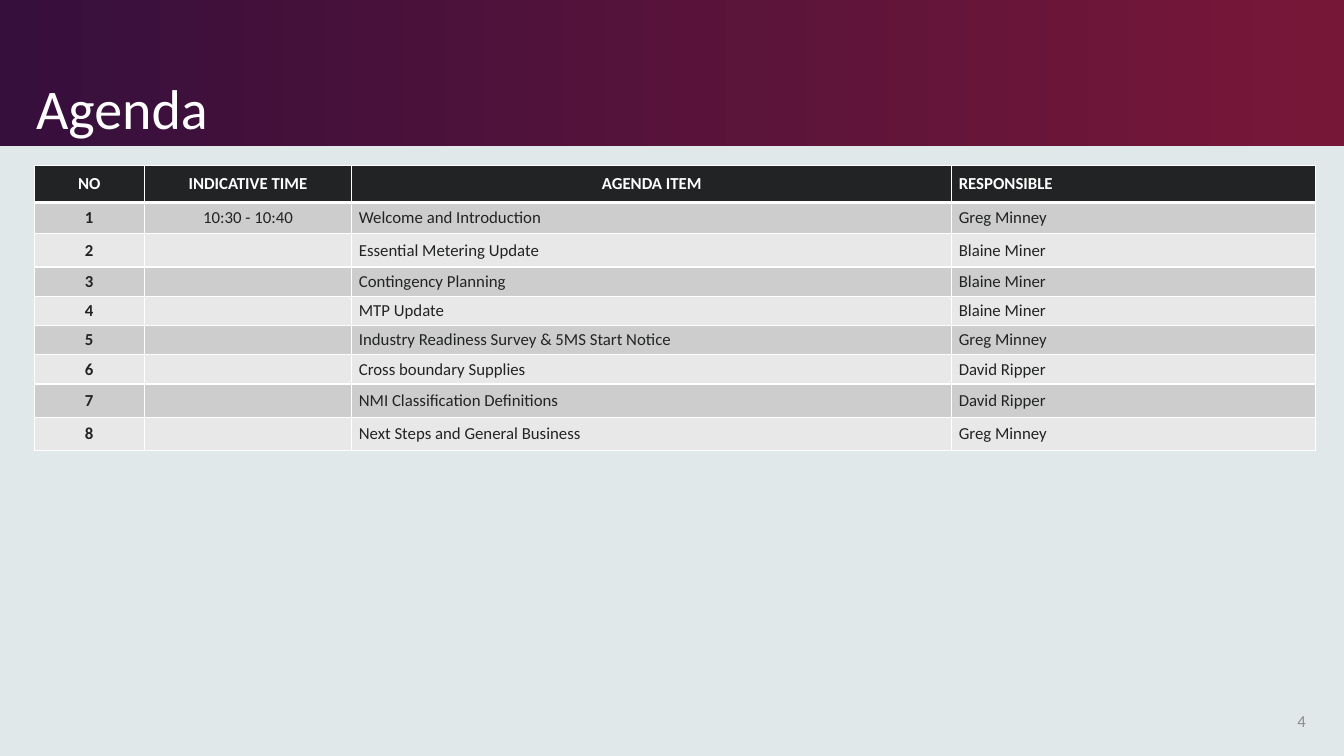
from lxml import etree
from pptx import Presentation
from pptx.dml.color import RGBColor
from pptx.enum.shapes import MSO_SHAPE
from pptx.enum.text import MSO_ANCHOR, PP_ALIGN
from pptx.oxml.ns import qn
from pptx.util import Inches, Pt

LEFT, CENTER, RIGHT = PP_ALIGN.LEFT, PP_ALIGN.CENTER, PP_ALIGN.RIGHT
MIDDLE, BOTTOM = MSO_ANCHOR.MIDDLE, MSO_ANCHOR.BOTTOM
RECTANGLE = MSO_SHAPE.RECTANGLE

# Content
TITLE = "Agenda"
PAGE_NUMBER = "4"
HEADER = ("NO", "INDICATIVE TIME", "AGENDA ITEM", "RESPONSIBLE")
AGENDA = [
    ("10:30 - 10:40", "Welcome and Introduction", "Greg Minney"),
    ("", "Essential Metering Update", "Blaine Miner"),
    ("", "Contingency Planning", "Blaine Miner"),
    ("", "MTP Update", "Blaine Miner"),
    ("", "Industry Readiness Survey & 5MS Start Notice", "Greg Minney"),
    ("", "Cross boundary Supplies", "David Ripper"),
    ("", "NMI Classification Definitions", "David Ripper"),
    ("", "Next Steps and General Business", "Greg Minney"),
]

# Format
FONT = "Calibri"
COLORS = {
    "background": "E0E8EA", "banner_start": "360F3C", "banner_end": "771738",
    "white": "FFFFFF", "dark": "222324", "odd": "CDCDCD", "even": "E8E8E8",
    "page_number": "8D8D8E",
}
SLIDE_W, SLIDE_H = 13.33, 7.5
BANNER_H = 1.45
TITLE_BOX = (0.26, 0.15, 9.84, 1.3)
PAGE_BOX = (12.42, 6.95, 0.63, 0.4)
TABLE_LEFT, TABLE_TOP = 0.34, 1.64
COLUMNS = (1.09, 2.06, 5.95, 3.61)
ROWS = (0.37, 0.31, 0.33, 0.29, 0.29, 0.29, 0.29, 0.33, 0.33)
CELL_FORMAT = {
    "margin_left": Inches(0.07), "margin_right": Inches(0.07),
    "margin_top": 0, "margin_bottom": 0, "vertical_anchor": MIDDLE,
}
CELL_PARAGRAPH = {"space_before": Pt(1), "space_after": Pt(1)}


def color(name):
    return RGBColor.from_string(COLORS[name])


def apply(target, values):
    for attribute, value in values.items():
        setattr(target, attribute, value)


def write(paragraph, text, size, ink, bold=False, align=LEFT):
    paragraph.alignment = align
    if not text:
        # An empty cell keeps its row low through the end mark's size
        etree.SubElement(paragraph._p, qn("a:endParaRPr"), sz=str(size * 100))
        return
    run = paragraph.add_run()
    run.text = text
    apply(run.font, {"name": FONT, "size": Pt(size), "bold": bold})
    run.font.color.rgb = color(ink)


def add_label(box, text, size, ink, align, anchor):
    frame = slide.shapes.add_textbox(*map(Inches, box)).text_frame
    apply(frame, {"word_wrap": True, "vertical_anchor": anchor})
    write(frame.paragraphs[0], text, size, ink, align=align)
    return frame.paragraphs[0]


def add_borders(cell, widths):
    properties = cell._tc.get_or_add_tcPr()
    for side, width in widths.items():
        line = etree.SubElement(properties, qn(f"a:ln{side}"), w=str(Pt(width)))
        fill = etree.SubElement(line, qn("a:solidFill"))
        etree.SubElement(fill, qn("a:srgbClr"), val=COLORS["white"])


prs = Presentation()
prs.slide_width, prs.slide_height = Inches(SLIDE_W), Inches(SLIDE_H)
slide = prs.slides.add_slide(prs.slide_layouts[6])
slide.background.fill.solid()
slide.background.fill.fore_color.rgb = color("background")

# Banner
banner = slide.shapes.add_shape(RECTANGLE, 0, 0, prs.slide_width, Inches(BANNER_H))
banner.shadow.inherit = False
banner.line.fill.background()
banner.fill.gradient()
banner.fill.gradient_angle = 0
stops = (("banner_start", 0), ("banner_end", 0.99))
for stop, (name, position) in zip(banner.fill.gradient_stops, stops):
    stop.color.rgb = color(name)
    stop.position = position

# Title and page number
title = add_label(TITLE_BOX, TITLE, 40, "white", LEFT, BOTTOM)
title.line_spacing = 0.9
add_label(PAGE_BOX, PAGE_NUMBER, 12, "page_number", RIGHT, MIDDLE)

# Agenda table
lines = [HEADER] + [(str(n), *item) for n, item in enumerate(AGENDA, 1)]
agenda = slide.shapes.add_table(
    len(ROWS), len(COLUMNS), Inches(TABLE_LEFT), Inches(TABLE_TOP),
    Inches(sum(COLUMNS)), Inches(sum(ROWS))).table
for column, width in zip(agenda.columns, COLUMNS):
    column.width = Inches(width)
for row, height in zip(agenda.rows, ROWS):
    row.height = Inches(height)

for r, line in enumerate(lines):
    is_header = r == 0
    band = "dark" if is_header else "odd" if r % 2 else "even"
    ink = "white" if is_header else "dark"
    borders = {"L": 1, "R": 1, "T": 3 if r == 1 else 1, "B": 3 if is_header else 1}
    for c, text in enumerate(line):
        cell = agenda.cell(r, c)
        apply(cell, CELL_FORMAT)
        add_borders(cell, borders)
        cell.fill.solid()
        cell.fill.fore_color.rgb = color(band)
        paragraph = cell.text_frame.paragraphs[0]
        apply(paragraph, CELL_PARAGRAPH)
        centered = c < 2 or (is_header and c == 2)
        write(paragraph, text, 12, ink, bold=is_header or c == 0,
              align=CENTER if centered else LEFT)

prs.save("out.pptx")
